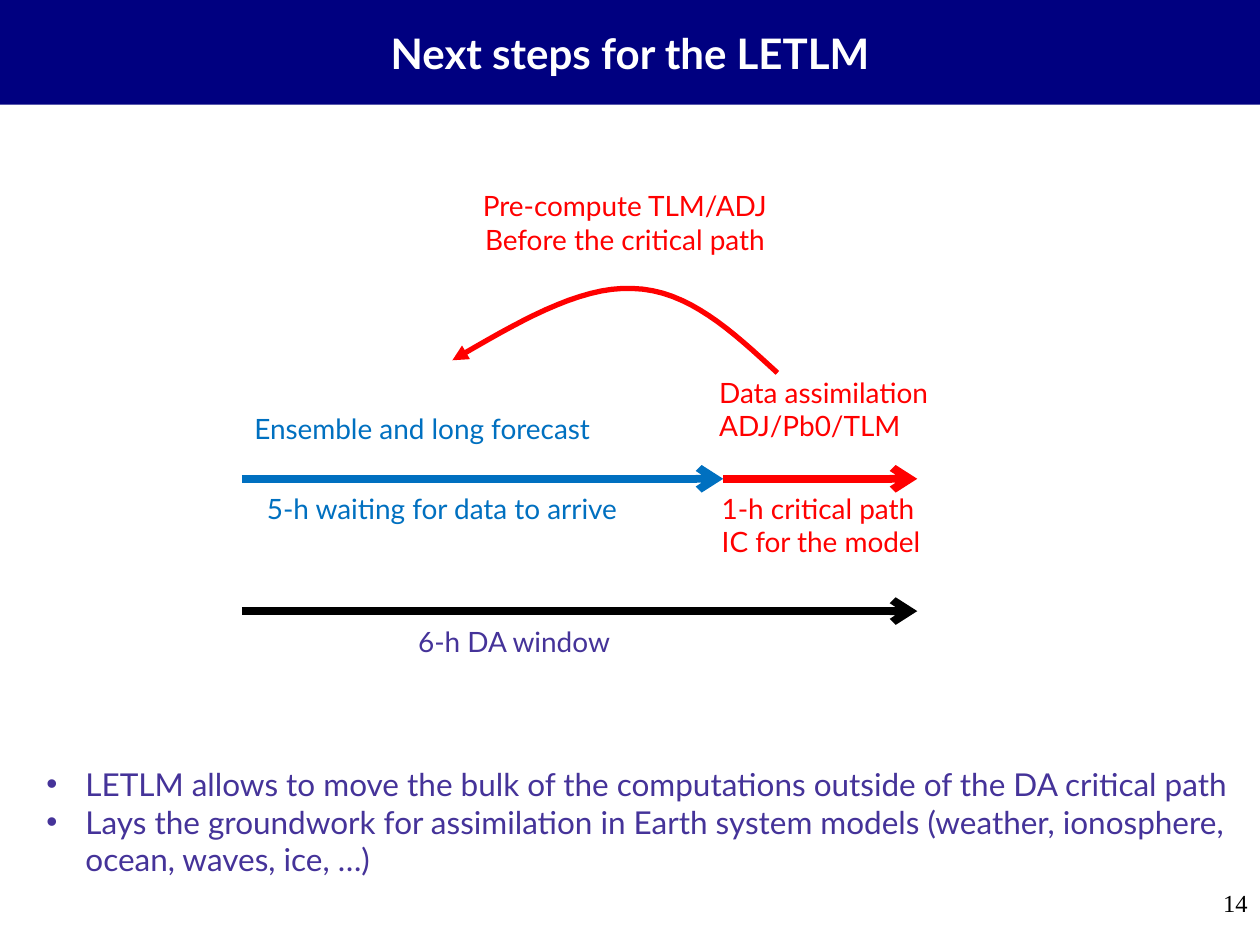
"""Build the slide on the next steps for the LETLM."""
import pptx
import pptx.dml.color
import pptx.enum.shapes
import pptx.enum.text
import pptx.oxml.ns
import pptx.util
from lxml import etree

WIDTH, HEIGHT = 10, 7.5
NAVY, VIOLET, BLUE, RED, BLACK, WHITE = "000080", "453399", "0070C0", "FF0000", "000000", "FFFFFF"
ALIGN = pptx.enum.text.PP_ALIGN

TITLE = "Next steps for the LETLM"
WINDOW_START, DATA_ARRIVAL, WINDOW_END = 1.92, 5.74, 7.28
PHASE_ROW, WINDOW_ROW = 3.8, 4.85
ARROWS = [
    (WINDOW_START, WINDOW_END, WINDOW_ROW, BLACK),
    (WINDOW_START, DATA_ARRIVAL, PHASE_ROW, BLUE),
    (DATA_ARRIVAL, WINDOW_END, PHASE_ROW, RED),
]
LABELS = [
    (["6-h DA window"], (3.22, 4.91, 1.78, 0.37), VIOLET, ALIGN.LEFT),
    (["5-h waiting for data to arrive"], (2.02, 3.85, 3.06, 0.37), BLUE, ALIGN.LEFT),
    (["1-h critical path", "IC for the model"], (5.63, 3.85, 1.83, 0.64), RED, ALIGN.LEFT),
    (["Ensemble and long forecast"], (1.92, 3.22, 2.87, 0.37), BLUE, ALIGN.LEFT),
    (["Data assimilation", "ADJ/Pb0/TLM"], (5.61, 2.93, 2, 0.64), RED, ALIGN.LEFT),
    (["Pre-compute TLM/ADJ", "Before the critical path"], (3.62, 1.45, 2.68, 0.64), RED, ALIGN.CENTER),
]
CURVES = [
    [(6.17, 2.96), (5.81, 2.63), (5.46, 2.3), (5.02, 2.29)],
    [(5.02, 2.29), (4.59, 2.27), (4.09, 2.57), (3.59, 2.86)],
]
CURVE_STEPS = 16
BULLETS = [
    "LETLM allows to move the bulk of the computations outside of the DA critical path",
    "Lays the groundwork for assimilation in Earth system models "
    "(weather, ionosphere, ocean, waves, ice, …)",
]
BULLET_INDENT = 0.31
PAGE_NUMBER = "14"


def color(value):
    return pptx.dml.color.RGBColor.from_string(value)


def inches(*lengths):
    return [pptx.util.Inches(length) for length in lengths]


def place(shape, box):
    shape.left, shape.top, shape.width, shape.height = inches(*box)


def format_text(paragraph, size, shade, font="Lato", align=ALIGN.LEFT, bold=False):
    paragraph.alignment = align
    for run in paragraph.runs:
        run.font.name, run.font.size, run.font.bold = font, pptx.util.Pt(size), bold
        run.font.color.rgb = color(shade)


def add_text(slide, lines, box, wrap=True, **style):
    text_frame = slide.shapes.add_textbox(*inches(*box)).text_frame
    text_frame.word_wrap = wrap
    text_frame.text = "\n".join(lines)
    for paragraph in text_frame.paragraphs:
        format_text(paragraph, **style)
    return text_frame


def style_line(shape, shade, width, head):
    shape.line.color.rgb = color(shade)
    shape.line.width = pptx.util.Pt(width)
    tail = etree.SubElement(shape.line._get_or_add_ln(), pptx.oxml.ns.qn("a:tailEnd"))
    tail.set("type", head)


def add_arrow(slide, start, end, row, shade):
    arrow = slide.shapes.add_connector(
        pptx.enum.shapes.MSO_CONNECTOR.STRAIGHT, *inches(start, row, end, row))
    style_line(arrow, shade, 4.5, "arrow")
    etree.SubElement(arrow._element.spPr, pptx.oxml.ns.qn("a:effectLst"))


def curve_point(controls, share):
    rest = 1 - share
    weights = (rest ** 3, 3 * rest ** 2 * share, 3 * rest * share ** 2, share ** 3)
    return inches(*(sum(weight * value for weight, value in zip(weights, axis))
                    for axis in zip(*controls)))


def add_curve(slide):
    points = [curve_point(controls, step / CURVE_STEPS)
              for controls in CURVES for step in range(1, CURVE_STEPS + 1)]
    builder = slide.shapes.build_freeform(*inches(*CURVES[0][0]))
    builder.add_line_segments(points, close=False)
    curve = builder.convert_to_shape()
    curve.fill.background()
    curve.shadow.inherit = False
    style_line(curve, RED, 3, "triangle")


def add_bullet(paragraph):
    properties = paragraph._p.get_or_add_pPr()
    indent = pptx.util.Inches(BULLET_INDENT)
    properties.set("marL", str(indent))
    properties.set("indent", str(-indent))
    etree.SubElement(properties, pptx.oxml.ns.qn("a:buFont")).set("typeface", "Arial")
    etree.SubElement(properties, pptx.oxml.ns.qn("a:buChar")).set("char", "•")


def add_title(slide):
    title = slide.shapes.title
    place(title, (0, 0, WIDTH, 0.83))
    title.fill.solid()
    title.fill.fore_color.rgb = color(NAVY)
    title.text_frame.text = TITLE
    title.text_frame.vertical_anchor = pptx.enum.text.MSO_ANCHOR.MIDDLE
    format_text(title.text_frame.paragraphs[0], 24, WHITE, align=ALIGN.CENTER, bold=True)


def main():
    presentation = pptx.Presentation()
    presentation.slide_width, presentation.slide_height = inches(WIDTH, HEIGHT)
    slide = presentation.slides.add_slide(presentation.slide_layouts[5])
    add_title(slide)
    add_text(slide, [PAGE_NUMBER], (7.92, 7, 2.08, 0.5), size=14, shade=BLACK,
             font="Times New Roman", align=ALIGN.RIGHT)
    for arrow in ARROWS:
        add_arrow(slide, *arrow)
    for lines, box, shade, align in LABELS:
        add_text(slide, lines, box, wrap=False, size=16, shade=shade, align=align)
    add_curve(slide)
    bullets = add_text(slide, BULLETS, (0.27, 6.02, 9.58, 1.01), size=18, shade=VIOLET)
    for paragraph in bullets.paragraphs:
        add_bullet(paragraph)
    presentation.save("out.pptx")


if __name__ == "__main__":
    main()
